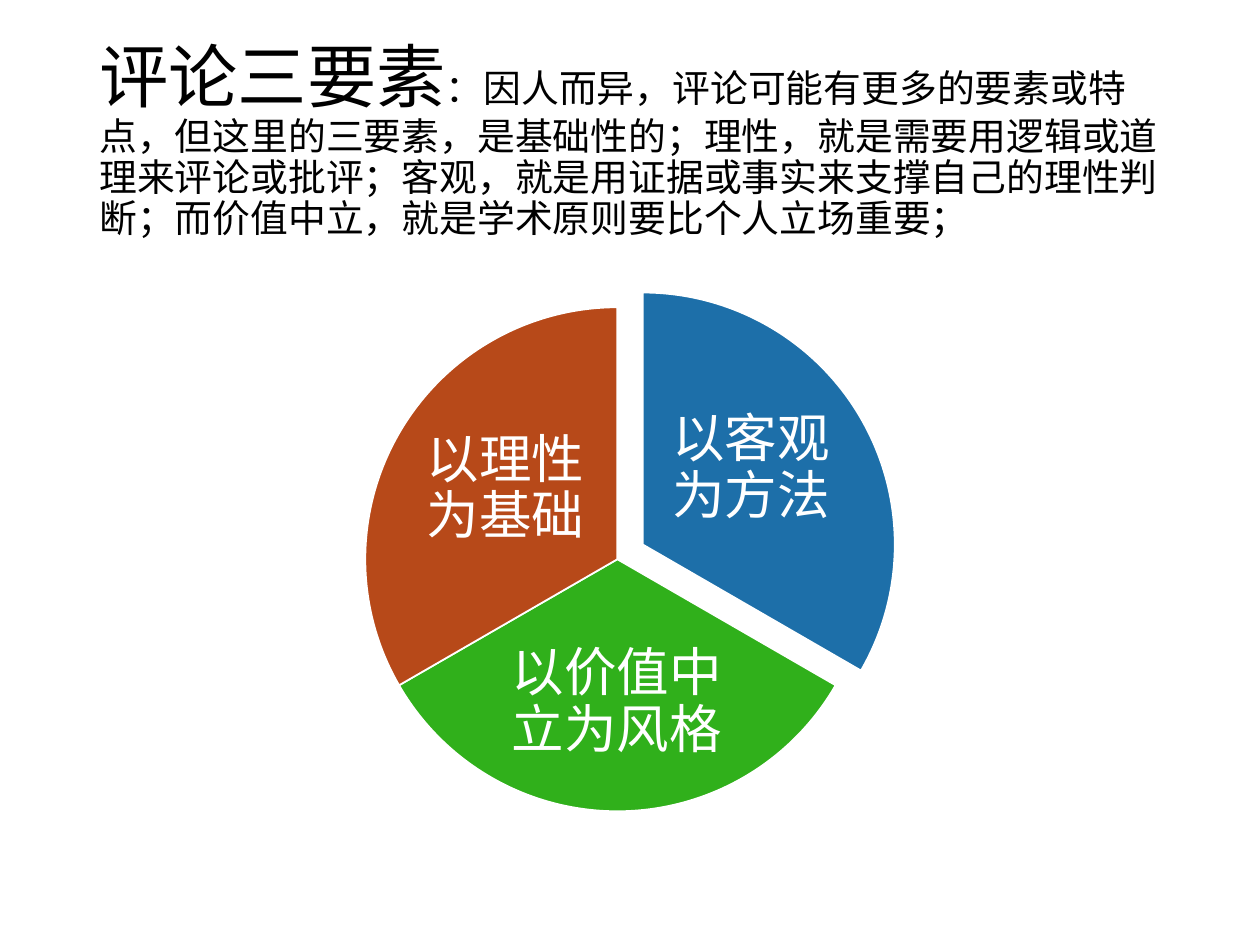
from math import cos, radians, sin

from pptx import Presentation
from pptx.dml.color import RGBColor
from pptx.enum import shapes, text
from pptx.util import Pt

BLACK = RGBColor(0x00, 0x00, 0x00)
WHITE = RGBColor(0xFF, 0xFF, 0xFF)
BLUE = RGBColor(0x1D, 0x6F, 0xA9)
GREEN = RGBColor(0x30, 0xB0, 0x1B)
RUST = RGBColor(0xB7, 0x49, 0x19)
FONT = "Times New Roman"

TITLE_RUNS = [
    ("评论三要素", 39.6),
    ("：因人而异，评论可能有更多的要素或特点，但这里的三要素，是基础性的；"
     "理性，就是需要用逻辑或道理来评论或批评；客观，就是用证据或事实来支撑自己的理性判断；"
     "而价值中立，就是学术原则要比个人立场重要；", 21.6),
]

# label, colour, pull out from the centre, label box (left, top, width, height)
SLICES = [
    ("以客观为方法", BLUE, 16.8, (380.2, 220.3, 97.9, 95.8)),
    ("以价值中立为风格", GREEN, 0, (287.3, 357.1, 130.3, 89.3)),
    ("以理性为基础", RUST, 0, (239.8, 231.8, 97.9, 95.8)),
]
CENTRE_X, CENTRE_Y, RADIUS = 352.8, 319.6, 144
FIRST_ANGLE = 270
SWEEP = 360 / len(SLICES)
ANGLE_UNIT = 0.6  # one degree, as python-pptx scales shape adjustments


def add_slice(group, index, colour, pull):
    start = FIRST_ANGLE + index * SWEEP
    middle = radians(start + SWEEP / 2)
    left = CENTRE_X + pull * cos(middle) - RADIUS
    top = CENTRE_Y + pull * sin(middle) - RADIUS
    pie = group.shapes.add_shape(shapes.MSO_SHAPE.PIE, Pt(left), Pt(top),
                                 Pt(2 * RADIUS), Pt(2 * RADIUS))
    pie.adjustments[0] = start % 360 * ANGLE_UNIT
    pie.adjustments[1] = (start + SWEEP) % 360 * ANGLE_UNIT
    pie.shadow.inherit = False
    pie.fill.solid()
    pie.fill.fore_color.rgb = colour
    pie.line.color.rgb = WHITE
    pie.line.width = Pt(1)


def add_label(group, label, box):
    frame = group.shapes.add_textbox(*map(Pt, box)).text_frame
    frame.word_wrap = True
    frame.vertical_anchor = text.MSO_ANCHOR.MIDDLE
    frame.margin_left = frame.margin_right = Pt(3)
    frame.margin_top = frame.margin_bottom = Pt(3)
    paragraph = frame.paragraphs[0]
    paragraph.text = label
    paragraph.alignment = text.PP_ALIGN.CENTER
    paragraph.line_spacing = 0.9
    paragraph.font.name = FONT
    paragraph.font.size = Pt(30)
    paragraph.font.color.rgb = WHITE


def fill_title(title):
    title.left, title.top, title.width, title.height = map(Pt, (49.5, 28.8, 621, 104.4))
    frame = title.text_frame
    frame.word_wrap = True
    frame.auto_size = text.MSO_AUTO_SIZE.NONE
    frame.vertical_anchor = text.MSO_ANCHOR.MIDDLE
    paragraph = frame.paragraphs[0]
    paragraph.alignment = text.PP_ALIGN.LEFT
    paragraph.line_spacing = 0.9
    for wording, size in TITLE_RUNS:
        run = paragraph.add_run()
        run.text = wording
        run.font.name = FONT
        run.font.size = Pt(size)
        run.font.color.rgb = BLACK


def main():
    presentation = Presentation()
    presentation.slide_width, presentation.slide_height = Pt(720), Pt(540)
    slide = presentation.slides.add_slide(presentation.slide_layouts[5])
    fill_title(slide.shapes.title)
    group = slide.shapes.add_group_shape()
    for index, (label, colour, pull, box) in enumerate(SLICES):
        add_slice(group, index, colour, pull)
        add_label(group, label, box)
    presentation.save("out.pptx")


if __name__ == "__main__":
    main()
